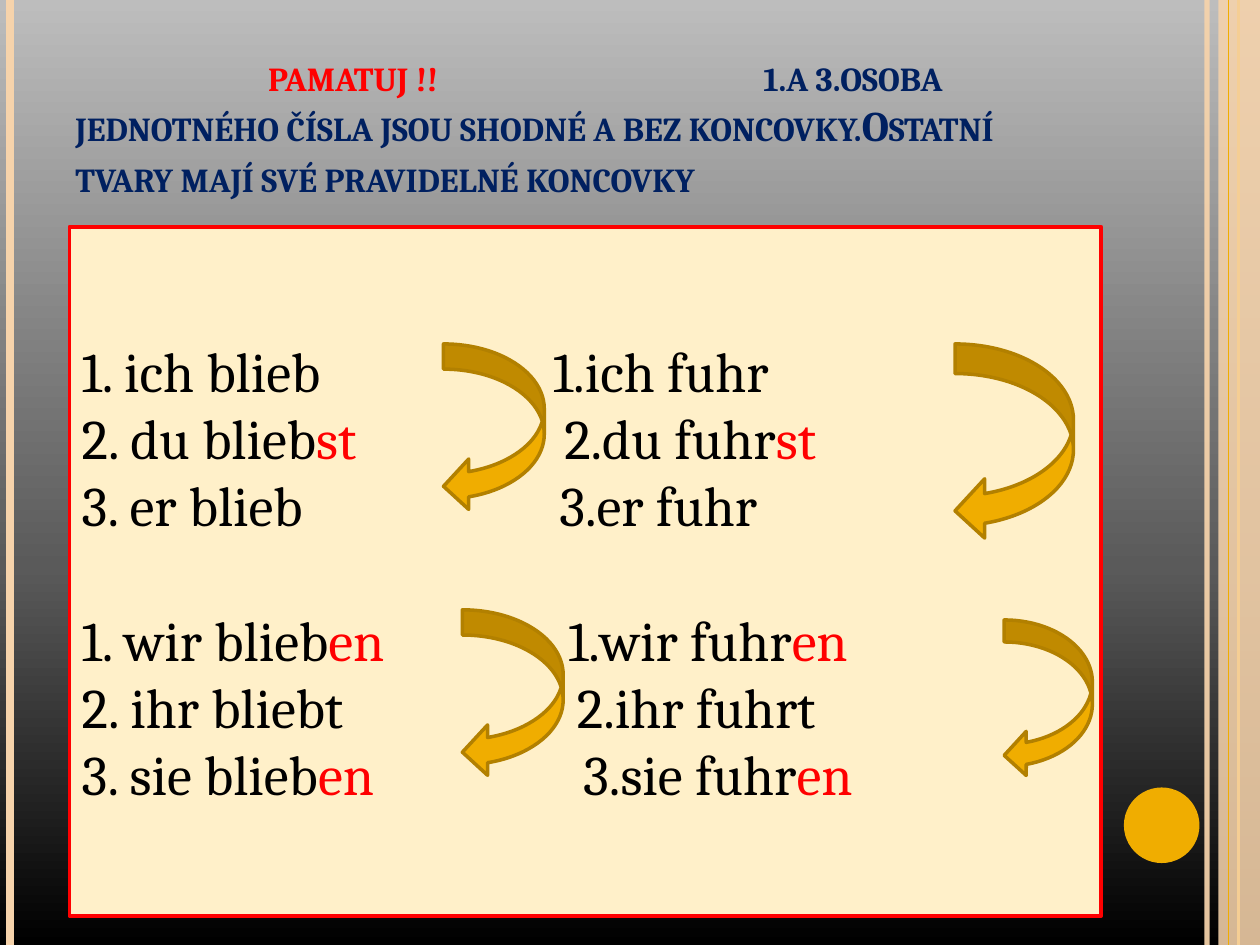
from copy import deepcopy

from lxml import etree
from pptx import Presentation
from pptx.dml.color import RGBColor
from pptx.enum.shapes import MSO_CONNECTOR, MSO_SHAPE
from pptx.enum.text import MSO_ANCHOR, PP_ALIGN
from pptx.oxml.ns import qn
from pptx.util import Inches, Pt

STRAIGHT = MSO_CONNECTOR.STRAIGHT
RECTANGLE, OVAL = MSO_SHAPE.RECTANGLE, MSO_SHAPE.OVAL
CURVED_ARROW = MSO_SHAPE.CURVED_LEFT_ARROW
MIDDLE, BOTTOM = MSO_ANCHOR.MIDDLE, MSO_ANCHOR.BOTTOM
LEFT, JUSTIFY = PP_ALIGN.LEFT, PP_ALIGN.JUSTIFY

FONT = "Cambria"
AMBER, PEACH, CREAM, BRONZE = "F0AD00", "F6D3AB", "FFF0C9", "B28000"
RED, NAVY, BLACK = "FF0000", "002060", "000000"
SLIDE_HEIGHT = 7.5


def rgb(hex_color):
    return RGBColor.from_string(hex_color)


def set_opacity(fill_parent, percent):
    """Make the solid fill directly inside the given element translucent."""
    color = fill_parent.find(qn("a:solidFill")).find(qn("a:srgbClr"))
    etree.SubElement(color, qn("a:alpha")).set("val", str(percent * 1000))


class SlideBuilder:
    def __init__(self, slide):
        self.slide = slide

    def background(self, stops):
        """Paint a bottom-to-top gradient from (position, colour) pairs."""
        fill = self.slide.background.fill
        fill.gradient()
        fill.gradient_angle = 90
        stop_list = self.slide.element.xpath(".//a:gsLst")[0]
        while len(stop_list) < len(stops):
            stop_list.append(deepcopy(stop_list[-1]))
        for stop, (position, color) in zip(fill.gradient_stops, stops):
            stop.position = position
            stop.color.rgb = rgb(color)

    def vertical_line(self, x, color, width, opacity=100):
        rule = self.slide.shapes.add_connector(
            STRAIGHT, Inches(x), 0, Inches(x), Inches(SLIDE_HEIGHT))
        rule.line.color.rgb = rgb(color)
        rule.line.width = Pt(width)
        properties = rule.element.spPr
        etree.SubElement(properties, qn("a:effectLst"))
        if opacity < 100:
            set_opacity(properties.find(qn("a:ln")), opacity)

    def shape(self, preset, box, fill, outline=None, opacity=100):
        shape = self.slide.shapes.add_shape(preset, *map(Inches, box))
        shape.shadow.inherit = False
        shape.fill.solid()
        shape.fill.fore_color.rgb = rgb(fill)
        if outline:
            shape.line.color.rgb = rgb(outline)
            shape.line.width = Pt(2)
        else:
            shape.line.fill.background()
        if opacity < 100:
            set_opacity(shape.element.spPr, opacity)
        return shape

    def text_frame(self, shape, anchor):
        frame = shape.text_frame
        frame.word_wrap = True
        frame.vertical_anchor = anchor
        return frame

    def paragraph(self, paragraph, runs, size, align, tabs, title=False):
        """Fill a paragraph with (text, colour) runs and tab stops in inches."""
        paragraph.alignment = align
        tab_list = etree.SubElement(
            paragraph._p.get_or_add_pPr(), qn("a:tabLst"))
        for position in tabs:
            tab = etree.SubElement(tab_list, qn("a:tab"))
            tab.set("pos", str(Inches(position)))
            tab.set("algn", "l")
        for text, color in runs:
            run = paragraph.add_run()
            run.text = text
            run.font.name = FONT
            run.font.size = Pt(size)
            run.font.color.rgb = rgb(color)
            if title:
                run.font.bold = True
                run._r.get_or_add_rPr().set("cap", "small")

    def title(self, box, runs, tabs):
        title = self.slide.shapes.add_textbox(*map(Inches, box))
        frame = self.text_frame(title, BOTTOM)
        self.paragraph(frame.paragraphs[0], runs, 24, LEFT, tabs, True)

    def conjugation(self, box, rows):
        """Draw the panel; each row has two (stem, ending) forms and a tab."""
        panel = self.shape(RECTANGLE, box, CREAM, RED)
        frame = self.text_frame(panel, MIDDLE)
        for index, (first, second, tab) in enumerate(rows):
            line = frame.paragraphs[0] if index == 0 else frame.add_paragraph()
            if index == 3:
                line.space_before = Pt(38.4)
            runs = [(first[0], BLACK), (first[1], RED),
                    ("\t" + second[0], BLACK), (second[1], RED)]
            self.paragraph(line, [run for run in runs if run[0]], 32,
                           JUSTIFY, [tab])


def main():
    presentation = Presentation()
    presentation.slide_width = Inches(10)
    presentation.slide_height = Inches(SLIDE_HEIGHT)
    builder = SlideBuilder(
        presentation.slides.add_slide(presentation.slide_layouts[6]))

    builder.background([(0, BLACK), (0.4, "5A5A5A"), (1, "BDBDBD")])
    builder.vertical_line(9.58, PEACH, 3, opacity=93)
    builder.vertical_line(0.08, PEACH, 4.5)
    builder.vertical_line(9.83, AMBER, 1.5)
    builder.shape(RECTANGLE, (9.67, 0, 0.33, SLIDE_HEIGHT), PEACH, opacity=87)
    builder.vertical_line(9.75, AMBER, 0.75)
    builder.shape(OVAL, (8.92, 6.25, 0.6, 0.6), AMBER)

    builder.conjugation((0.55, 1.8, 8.19, 5.47), [
        (("1. ich blieb", ""), ("1.ich fuhr", ""), 3.74),
        (("2. du blieb", "st"), ("2.du fuhr", "st"), 3.83),
        (("3. er blieb", ""), ("3.er fuhr", ""), 3.79),
        (("1. wir blieb", "en"), ("1.wir fuhr", "en"), 3.86),
        (("2. ihr bliebt", ""), ("2.ihr fuhrt", ""), 3.93),
        (("3. sie blieb", "en"), ("3.sie fuhr", "en"), 3.98),
    ])
    for arrow_box in [(7.97, 4.92, 0.7, 1.25), (3.52, 2.73, 0.8, 1.33),
                      (3.67, 4.84, 0.8, 1.33), (7.58, 2.73, 0.94, 1.56)]:
        builder.shape(CURVED_ARROW, arrow_box, AMBER, BRONZE)

    builder.title((0.5, 0.47, 8.17, 1.17), [
        ("\tpamatuj !!", RED),
        ("\t1.a 3.osoba jednotného čísla jsou shodné a bez koncovky."
         "Ostatní tvary mají své pravidelné koncovky", NAVY),
    ], tabs=[1.53, 5.46])

    presentation.save("out.pptx")


if __name__ == "__main__":
    main()
